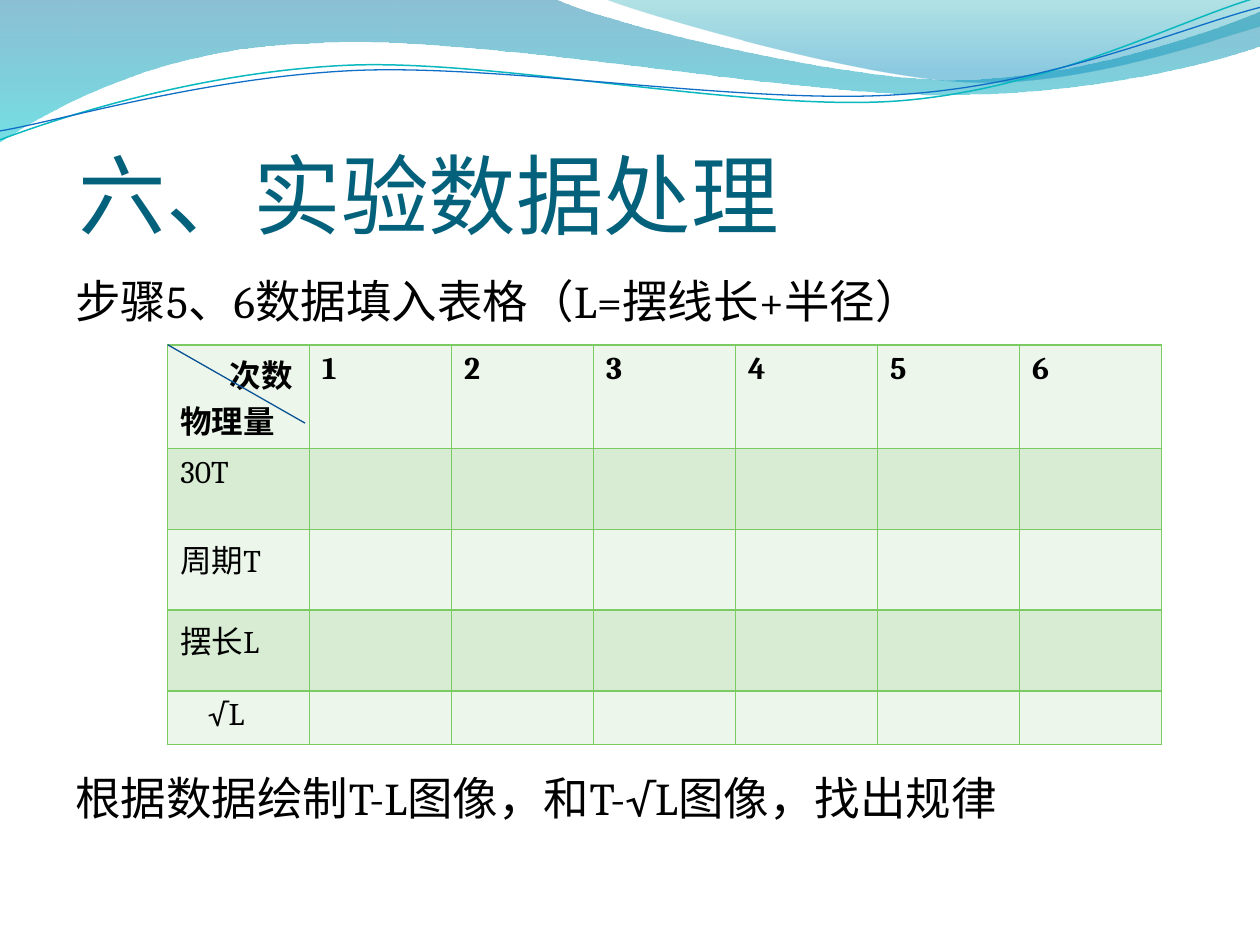
import pptx
import pptx.dml.color
import pptx.enum.shapes
import pptx.enum.text
import pptx.oxml
import pptx.oxml.ns
import pptx.util
from pptx.util import Cm

COLORS = {
    "title": "04617B", "text": "000000", "border": "7CCA62", "diagonal": "095295",
    "light_row": "ECF6EA", "dark_row": "D7ECD3",
    "wave_blue": "0074A1", "wave_cyan": "00C6CF",
    "crest_teal": "00A1A9", "crest_blue": "008BBF",
    "teal_line": "0AB8BF", "blue_line": "0F6FC6",
}
NAMESPACE = pptx.oxml.ns.nsdecls("a")


def rgb(name):
    return pptx.dml.color.RGBColor.from_string(COLORS[name])


def write_text(paragraph, text, size=18, font="Cambria", color="text", bold=False, align="LEFT"):
    paragraph.alignment = getattr(pptx.enum.text.PP_ALIGN, align)
    run = paragraph.add_run()
    run.text = text
    run.font.size = pptx.util.Pt(size)
    run.font.name = font
    run.font.bold = bold
    run.font.color.rgb = rgb(color)


presentation = pptx.Presentation()
presentation.slide_width = Cm(25.4)
presentation.slide_height = Cm(19.05)
slide = presentation.slides.add_slide(presentation.slide_layouts[6])

waves = [
    {"start": (0, 0), "segments": [
        [(11.18, -0.03)],
        [(12.09, 0.43), (16.87, 1.6), (19.25, 1.6)],
        [(21.67, 1.6), (24.33, 0.66), (25.4, 0.23)],
        [(25.43, 0.91)],
        [(24.97, 1.12), (22.1, 1.93), (18.95, 1.91)],
        [(15.8, 1.91), (9.7, 0.71), (6.53, 0.86)],
        [(3.28, 0.91), (1.17, 2.11), (-0.03, 2.87)],
        [(0, 0)]],
     "stops": [(0, "wave_blue", 45), (1, "wave_cyan", 55)]},
    {"start": (12.17, -0.03), "segments": [
        [(12.93, 0.28), (17.32, 1.57), (19.53, 1.65)],
        [(21.74, 1.75), (24.41, 0.81), (25.4, 0.53)],
        [(25.4, 0)],
        [(12.17, -0.03)]],
     "stops": [(0, "crest_teal", 30), (0.8, "crest_blue", 45)]},
    {"start": (-0.05, 2.22), "segments": [
        [(1.19, 1.82), (4.02, 1.04), (7.05, 1.05)],
        [(10.05, 1.07), (15.02, 2.37), (18.08, 2.29)],
        [(21.13, 2.2), (23.86, 0.91), (25.4, 0.55)]],
     "line": ("teal_line", 0.85)},
    {"start": (-0.04, 2.04), "segments": [
        [(1.16, 1.9), (4.17, 1.15), (7.2, 1.16)],
        [(10.25, 1.18), (15.13, 2.25), (18.19, 2.16)],
        [(21.22, 2.1), (23.93, 1.06), (25.45, 0.75)]],
     "line": ("blue_line", 0.75)},
]
for wave in waves:
    points = [(Cm(x), Cm(y)) for segment in wave["segments"] for x, y in segment]
    builder = slide.shapes.build_freeform(*map(Cm, wave["start"]))
    builder.add_line_segments(points, close="stops" in wave)
    shape = builder.convert_to_shape()
    shape.shadow.inherit = False
    lines = iter(list(shape._element.iter(pptx.oxml.ns.qn("a:lnTo"))))
    for segment in wave["segments"]:
        segment_lines = [next(lines) for point in segment]
        if len(segment) == 3:
            curve = pptx.oxml.parse_xml(f"<a:cubicBezTo {NAMESPACE}/>")
            segment_lines[0].addprevious(curve)
            for line in segment_lines:
                curve.append(line[0])
                line.getparent().remove(line)
    if "stops" in wave:
        shape.line.fill.background()
        shape.fill.gradient()
        shape.fill.gradient_angle = 270
        for stop, (position, color, opacity) in zip(shape.fill.gradient_stops, wave["stops"]):
            stop.position = position
            stop.color.rgb = rgb(color)
        gradient_colors = shape._element.spPr.iter(pptx.oxml.ns.qn("a:srgbClr"))
        for element, (position, color, opacity) in zip(gradient_colors, wave["stops"]):
            element.append(pptx.oxml.parse_xml(f'<a:alpha {NAMESPACE} val="{opacity * 1000}"/>'))
    else:
        color, width = wave["line"]
        shape.rotation = 357.3
        shape.fill.background()
        shape.line.color.rgb = rgb(color)
        shape.line.width = pptx.util.Pt(width)

title = slide.shapes.add_textbox(Cm(1.59), Cm(1.78), Cm(22.86), Cm(3.18)).text_frame
title.word_wrap = True
title.vertical_anchor = pptx.enum.text.MSO_ANCHOR.BOTTOM
title.margin_left = title.margin_right = title.margin_bottom = 0
write_text(title.paragraphs[0], "六、实验数据处理", size=50, font="Calibri", color="title")

body = slide.shapes.add_textbox(Cm(1.27), Cm(5.38), Cm(22.86), Cm(12.19)).text_frame
body.word_wrap = True
write_text(body.paragraphs[0], "步骤5、6数据填入表格（L=摆线长+半径）", size=26)
conclusion = body.add_paragraph()
conclusion.space_before = pptx.util.Pt(253)
write_text(conclusion, "根据数据绘制T-L图像，和T-√L图像，找出规律", size=26)

labels = ["物理量", "30T", "周期T", "摆长L", "√L"]
row_heights = [2.09, 1.63, 1.63, 1.63, 1.08]
table_left, table_top, table_width = 3.38, 6.95, 20.04
table = slide.shapes.add_table(len(labels), 7, Cm(table_left), Cm(table_top),
                               Cm(table_width), Cm(sum(row_heights))).table
table.first_row = table.horz_banding = False
for column in table.columns:
    column.width = Cm(table_width / 7)
for row_index, (label, height) in enumerate(zip(labels, row_heights)):
    table.rows[row_index].height = Cm(height)
    for column_index in range(7):
        cell = table.cell(row_index, column_index)
        for side in "LRTB":
            cell._tc.get_or_add_tcPr().append(pptx.oxml.parse_xml(
                f'<a:ln{side} {NAMESPACE} w="12700"><a:solidFill>'
                f'<a:srgbClr val="{COLORS["border"]}"/></a:solidFill></a:ln{side}>'))
        cell.fill.solid()
        cell.fill.fore_color.rgb = rgb("dark_row" if row_index % 2 else "light_row")
        paragraph = cell.text_frame.paragraphs[0]
        if column_index == 0:
            if row_index == 0:
                write_text(paragraph, "次数", bold=True, align="RIGHT")
                paragraph = cell.text_frame.add_paragraph()
            write_text(paragraph, label, bold=row_index == 0)
        elif row_index == 0:
            write_text(paragraph, str(column_index), bold=True)
table.cell(0, 0).margin_right = Cm(0.34)
table.cell(4, 0).margin_left = Cm(0.81)

diagonal = slide.shapes.add_connector(pptx.enum.shapes.MSO_CONNECTOR.STRAIGHT,
                                      Cm(table_left), Cm(table_top), Cm(6.15), Cm(8.53))
diagonal.line.color.rgb = rgb("diagonal")
diagonal.line.width = pptx.util.Pt(0.75)
diagonal._element.spPr.append(pptx.oxml.parse_xml(f"<a:effectLst {NAMESPACE}/>"))

presentation.save("out.pptx")
